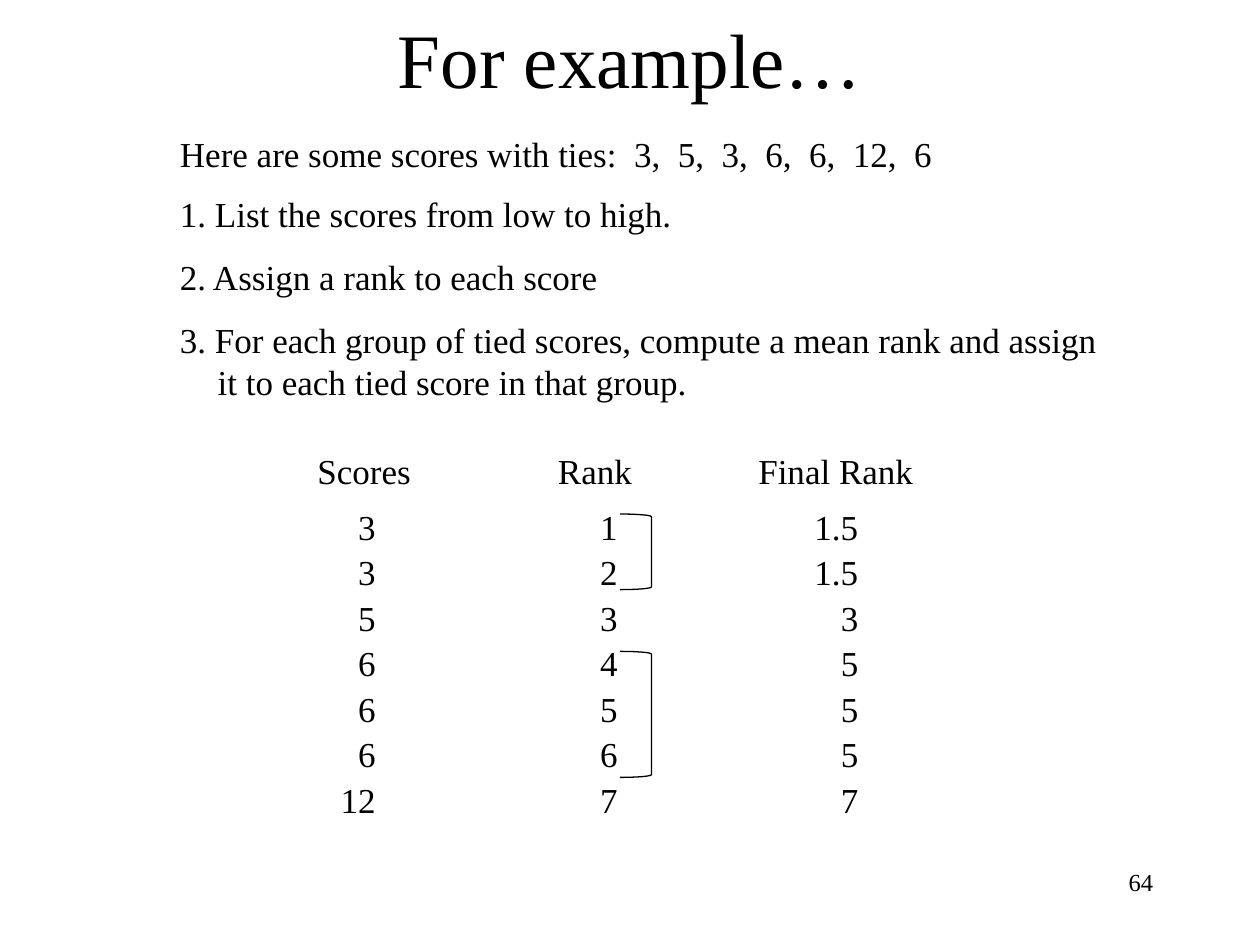
from pptx import Presentation
from pptx.dml.color import RGBColor
from pptx.enum.shapes import MSO_SHAPE
from pptx.enum.text import MSO_ANCHOR, MSO_AUTO_SIZE, PP_ALIGN
from pptx.util import Inches, Pt

BLACK = RGBColor(0, 0, 0)
FONT_NAME = "Times New Roman"
BRACKET = MSO_SHAPE.RIGHT_BRACKET
MIDDLE = MSO_ANCHOR.MIDDLE
TOP = MSO_ANCHOR.TOP
GROW = MSO_AUTO_SIZE.SHAPE_TO_FIT_TEXT
FIXED = MSO_AUTO_SIZE.NONE
LEFT, CENTER, RIGHT = PP_ALIGN.LEFT, PP_ALIGN.CENTER, PP_ALIGN.RIGHT

LINE_HEIGHT = 0.44
HEADER_TOP = 3.52
VALUES_TOP = HEADER_TOP + LINE_HEIGHT
VALUES_HEIGHT = 2.63

STATEMENTS = [
    (1, "Here are some scores with ties:  3,  5,  3,  6,  6,  12,  6"),
    (1.48, "1. List the scores from low to high."),
    (1.98, "2. Assign a rank to each score"),
]
MEAN_RANK_STEP = (
    "3. For each group of tied scores, compute a mean rank and assign "
    "it to each tied score in that group."
)
COLUMNS = [
    ("Scores", 2.42, 1.08, 2.58, 0.5, ["3", "3", "5", "6", "6", "6", "12"]),
    ("Rank", 4.33, 1.08, 4.5, 0.5, ["1", "2", "3", "4", "5", "6", "7"]),
    ("Final Rank", 5.92, 1.67, 6.33, 0.58,
     ["1.5", "1.5", "3", "5", "5", "5", "7"]),
]
TIE_BRACKETS = [(4.08, 0.6), (5.17, 1)]


def set_format(target, values):
    for attribute, value in values.items():
        setattr(target, attribute, value)


def add_text(slide, box, lines, size=20, align=LEFT, after=None,
             anchor=TOP, auto_size=GROW):
    frame = slide.shapes.add_textbox(*map(Inches, box)).text_frame
    set_format(frame, {
        "text": "\n".join(lines),
        "word_wrap": True,
        "auto_size": auto_size,
        "vertical_anchor": anchor,
    })
    for paragraph in frame.paragraphs:
        set_format(paragraph, {"alignment": align, "space_after": after})
        set_format(paragraph.font, {"name": FONT_NAME, "size": Pt(size)})
        paragraph.font.color.rgb = BLACK
    return frame


def add_hanging_step(slide, box, text):
    step = add_text(slide, box, [text]).paragraphs[0]
    properties = step._p.get_or_add_pPr()
    properties.set("marL", str(Inches(0.3)))
    properties.set("indent", str(Inches(-0.3)))


def add_column(slide, header, header_left, header_width,
               values_left, values_width, values):
    add_text(slide, (header_left, HEADER_TOP, header_width, LINE_HEIGHT),
             [header])
    add_text(slide, (values_left, VALUES_TOP, values_width, VALUES_HEIGHT),
             values, align=RIGHT, after=Pt(2))


def add_tie_bracket(slide, top, height):
    bracket = slide.shapes.add_shape(
        BRACKET, Inches(4.92), Inches(top), Inches(0.25), Inches(height))
    bracket.shadow.inherit = False
    bracket.fill.background()
    bracket.line.color.rgb = BLACK
    bracket.line.width = Pt(0.75)


def main():
    presentation = Presentation()
    set_format(presentation, {
        "slide_width": Inches(10),
        "slide_height": Inches(7.5),
    })
    slide = presentation.slides.add_slide(presentation.slide_layouts[6])

    add_text(slide, (0.75, 0.17, 8.5, 0.58), ["For example…"], size=44,
             align=CENTER, anchor=MIDDLE, auto_size=FIXED)
    for top, statement in STATEMENTS:
        add_text(slide, (1.33, top, 7.5, LINE_HEIGHT), [statement])
    add_hanging_step(slide, (1.33, 2.48, 7.5, 0.77), MEAN_RANK_STEP)
    for column in COLUMNS:
        add_column(slide, *column)
    for top, height in TIE_BRACKETS:
        add_tie_bracket(slide, top, height)
    add_text(slide, (7.17, 6.83, 2.08, 0.5), ["64"], size=14,
             align=RIGHT, auto_size=FIXED)

    presentation.save("out.pptx")


if __name__ == "__main__":
    main()
